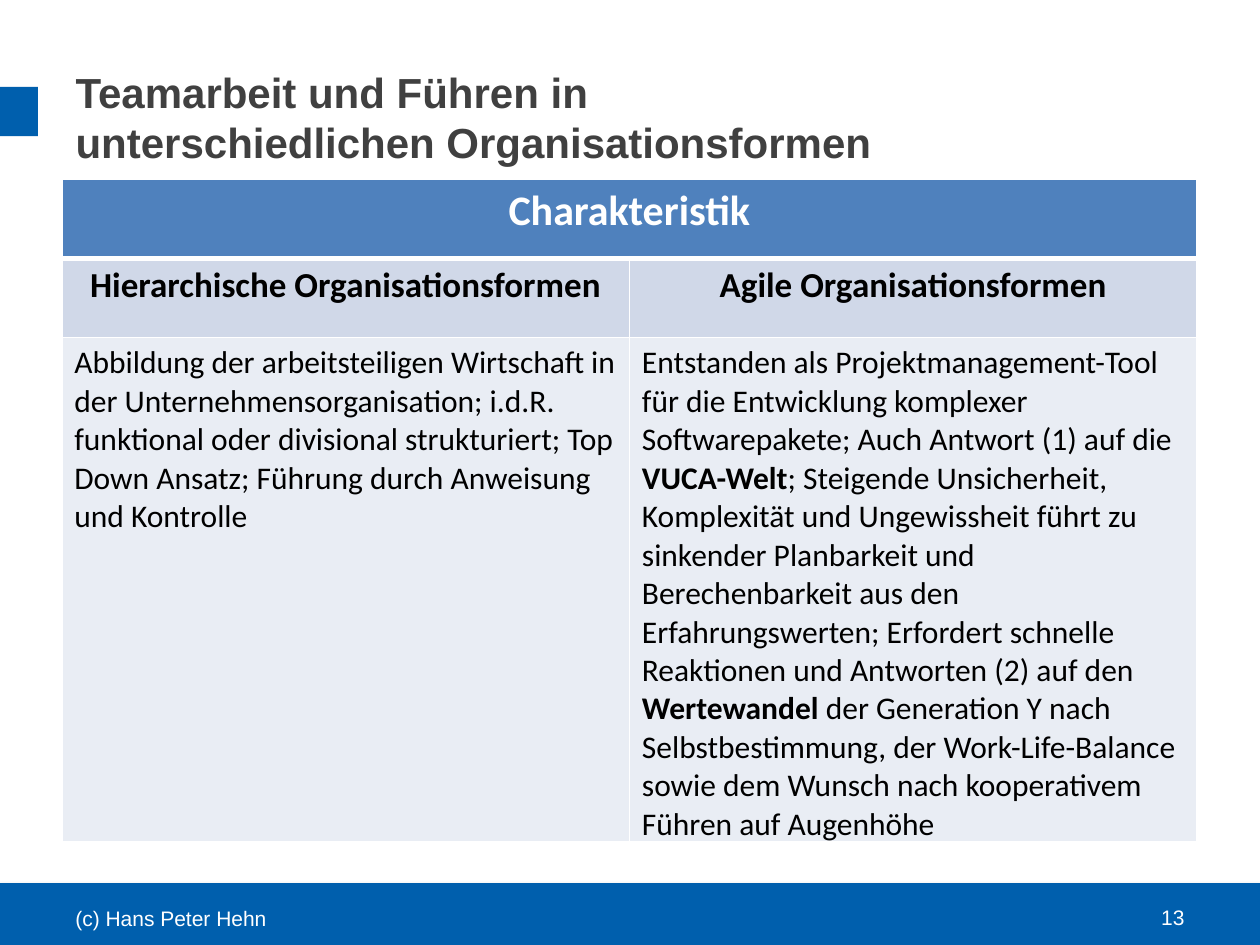
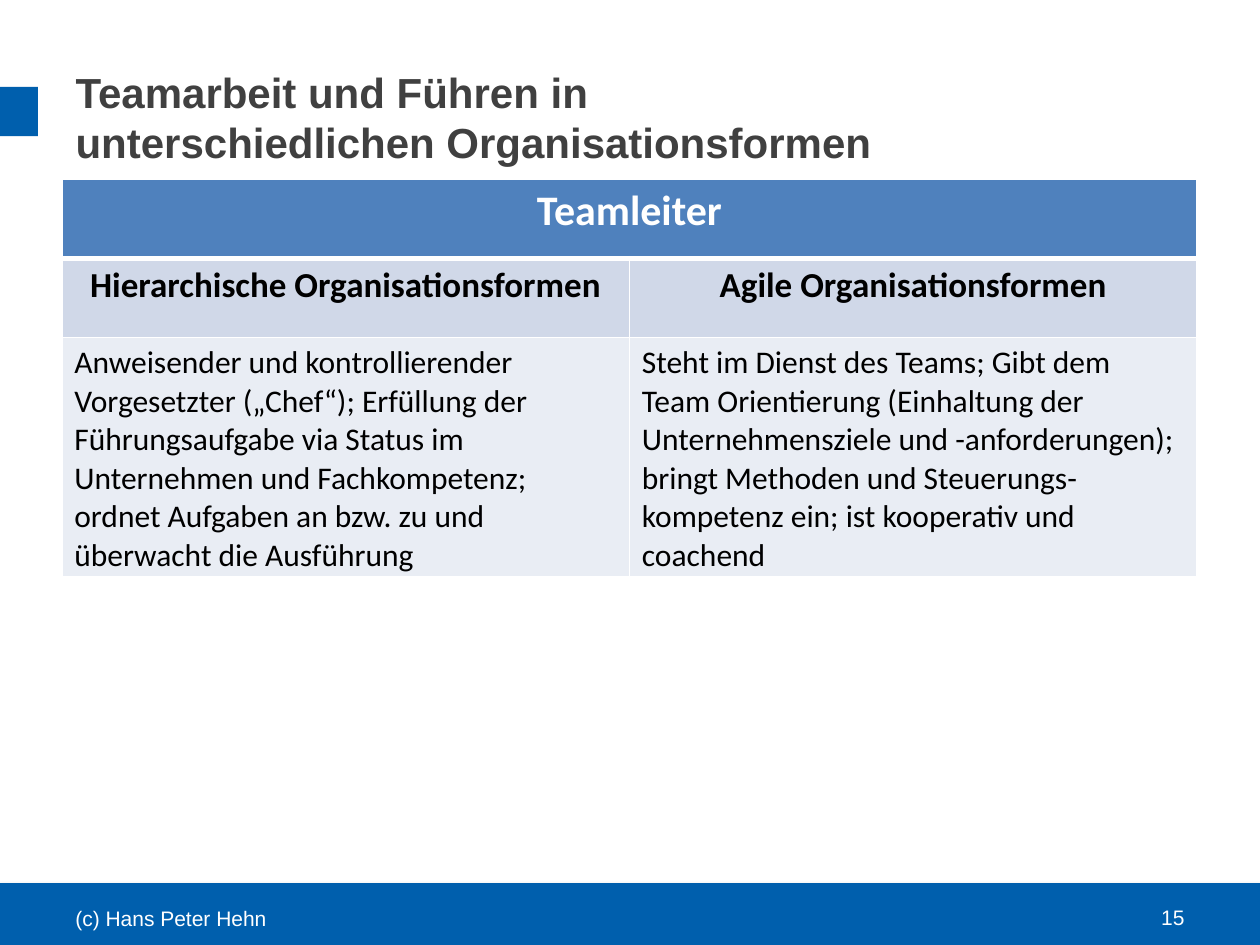
from lxml.etree import SubElement
from pptx import Presentation
from pptx.dml.color import RGBColor
from pptx.enum.shapes import MSO_SHAPE
from pptx.enum.text import MSO_ANCHOR, PP_ALIGN
from pptx.oxml.ns import qn
from pptx.util import Inches, Pt

BRAND_BLUE = "005FAD"
TITLE_GREY = "404040"
HEADER_BLUE = "4F81BD"
SUBHEADER_BLUE = "D0D8E8"
BODY_BLUE = "E9EDF4"
WHITE = "FFFFFF"
BLACK = "000000"

TITLE = "Teamarbeit und Führen in\nunterschiedlichen Organisationsformen"
COLUMN_HEADS = ["Hierarchische Organisationsformen", "Agile Organisationsformen"]
FOOTER = "(c) Hans Peter Hehn"
TITLE_BOX = (0.5, 0.3, 9, 1.25)
TABLE_BOX = (0.49, 1.42, 9.01)
FOOTER_BOX = (0.5, 7.09, 2.33, 0.4)
NUMBER_BOX = (7.17, 7.08, 2.33, 0.4)
BAND_BOX = (-0.02, 7.01, 10.14, 0.54)
MARKER_BOX = (-0.02, 0.69, 0.32, 0.39)
ROW_HEIGHT = 0.63

COMPARISONS = [
    {
        "topic": "Charakteristik",
        "number": "13",
        "body_height": 4,
        "texts": [
            "Abbildung der arbeitsteiligen Wirtschaft in der Unternehmensorganisation; "
            "i.d.R. funktional oder divisional strukturiert; Top Down Ansatz; "
            "Führung durch Anweisung und Kontrolle",
            "Entstanden als Projektmanagement-Tool für die Entwicklung komplexer "
            "Softwarepakete; Auch Antwort (1) auf die **VUCA-Welt**; Steigende "
            "Unsicherheit, Komplexität und Ungewissheit führt zu sinkender "
            "Planbarkeit und Berechenbarkeit aus den Erfahrungswerten; Erfordert "
            "schnelle Reaktionen und Antworten (2) auf den **Wertewandel **der "
            "Generation Y nach Selbstbestimmung, der Work-Life-Balance sowie dem "
            "Wunsch nach kooperativem Führen auf Augenhöhe",
        ],
    },
    {
        "topic": "Teamleiter",
        "number": "15",
        "body_height": 1.9,
        "texts": [
            "Anweisender und kontrollierender Vorgesetzter („Chef“); Erfüllung der "
            "Führungsaufgabe via Status im Unternehmen und Fachkompetenz; ordnet "
            "Aufgaben an bzw. zu und überwacht die Ausführung",
            "Steht im Dienst des Teams; Gibt dem Team Orientierung (Einhaltung der "
            "Unternehmensziele und -anforderungen); bringt Methoden und "
            "Steuerungs-kompetenz ein; ist kooperativ und coachend",
        ],
    },
]


def color(value):
    return RGBColor.from_string(value)


def inches(box):
    return [Inches(length) for length in box]


def write(frame, text, size, font="Arial", fill=BLACK, bold=False, align=PP_ALIGN.LEFT):
    frame.word_wrap = True
    para = frame.paragraphs[0]
    para.alignment = align
    for line_index, line in enumerate(text.split("\n")):
        if line_index:
            para.add_line_break()
        for part_index, part in enumerate(line.split("**")):
            span = para.add_run()
            span.text = part
            span.font.size = Pt(size)
            span.font.name = font
            span.font.bold = bold or part_index % 2 == 1
            span.font.color.rgb = color(fill)


def add_block(page, box):
    block = page.shapes.add_shape(MSO_SHAPE.RECTANGLE, *inches(box))
    block.shadow.inherit = False
    block.fill.solid()
    block.fill.fore_color.rgb = color(BRAND_BLUE)
    block.line.fill.background()
    return block


def add_band_shadow(band):
    effects = band._element.spPr.find(qn("a:effectLst"))
    shadow = SubElement(effects, qn("a:outerShdw"), blurRad=str(Pt(3.1)),
                        dist=str(Pt(1.8)), dir="5400000", rotWithShape="0")
    tone = SubElement(shadow, qn("a:srgbClr"), val=BLACK)
    SubElement(tone, qn("a:alpha"), val="35000")


def add_label(page, box, text, align):
    label = page.shapes.add_textbox(*inches(box))
    label.text_frame.vertical_anchor = MSO_ANCHOR.MIDDLE
    write(label.text_frame, text, 12, fill=WHITE, align=align)


def place_title(page, box, text):
    title = page.shapes.title
    title.left, title.top, title.width, title.height = inches(box)
    title.text_frame.vertical_anchor = MSO_ANCHOR.MIDDLE
    write(title.text_frame, text, 24, fill=TITLE_GREY, bold=True)


def add_frame(page, number):
    add_band_shadow(add_block(page, BAND_BOX))
    add_block(page, MARKER_BOX)
    place_title(page, TITLE_BOX, TITLE)
    add_label(page, FOOTER_BOX, FOOTER, PP_ALIGN.LEFT)
    add_label(page, NUMBER_BOX, number, PP_ALIGN.RIGHT)


def style_cell(cell, fill, top=1, bottom=1):
    properties = cell._tc.get_or_add_tcPr()
    for side, width in (("L", 1), ("R", 1), ("T", top), ("B", bottom)):
        line = SubElement(properties, qn(f"a:ln{side}"), w=str(Pt(width)))
        paint = SubElement(line, qn("a:solidFill"))
        SubElement(paint, qn("a:srgbClr"), val=WHITE)
    cell.fill.solid()
    cell.fill.fore_color.rgb = color(fill)


def add_comparison_table(page, box, topic, texts, body_height):
    left, top, width = box
    height = 2 * ROW_HEIGHT + body_height
    table = page.shapes.add_table(3, 2, *inches((left, top, width, height))).table
    for row, row_height in zip(table.rows, (ROW_HEIGHT, ROW_HEIGHT, body_height)):
        row.height = Inches(row_height)

    header = table.cell(0, 0)
    header.merge(table.cell(0, 1))
    write(header.text_frame, topic, 24, "Calibri", WHITE, True, PP_ALIGN.CENTER)
    for column, (head, text) in enumerate(zip(COLUMN_HEADS, texts)):
        style_cell(table.cell(0, column), HEADER_BLUE, bottom=3)
        head_cell, body_cell = table.cell(1, column), table.cell(2, column)
        style_cell(head_cell, SUBHEADER_BLUE, top=3)
        write(head_cell.text_frame, head, 20, "Calibri", bold=True, align=PP_ALIGN.CENTER)
        style_cell(body_cell, BODY_BLUE)
        write(body_cell.text_frame, text, 18, "Calibri")


def add_comparison_page(deck, topic, number, texts, body_height):
    page = deck.slides.add_slide(deck.slide_layouts[5])
    add_frame(page, number)
    add_comparison_table(page, TABLE_BOX, topic, texts, body_height)


def main():
    deck = Presentation()
    deck.slide_width, deck.slide_height = Inches(10), Inches(7.5)
    for comparison in COMPARISONS:
        add_comparison_page(deck, **comparison)
    deck.save("out.pptx")


if __name__ == "__main__":
    main()
